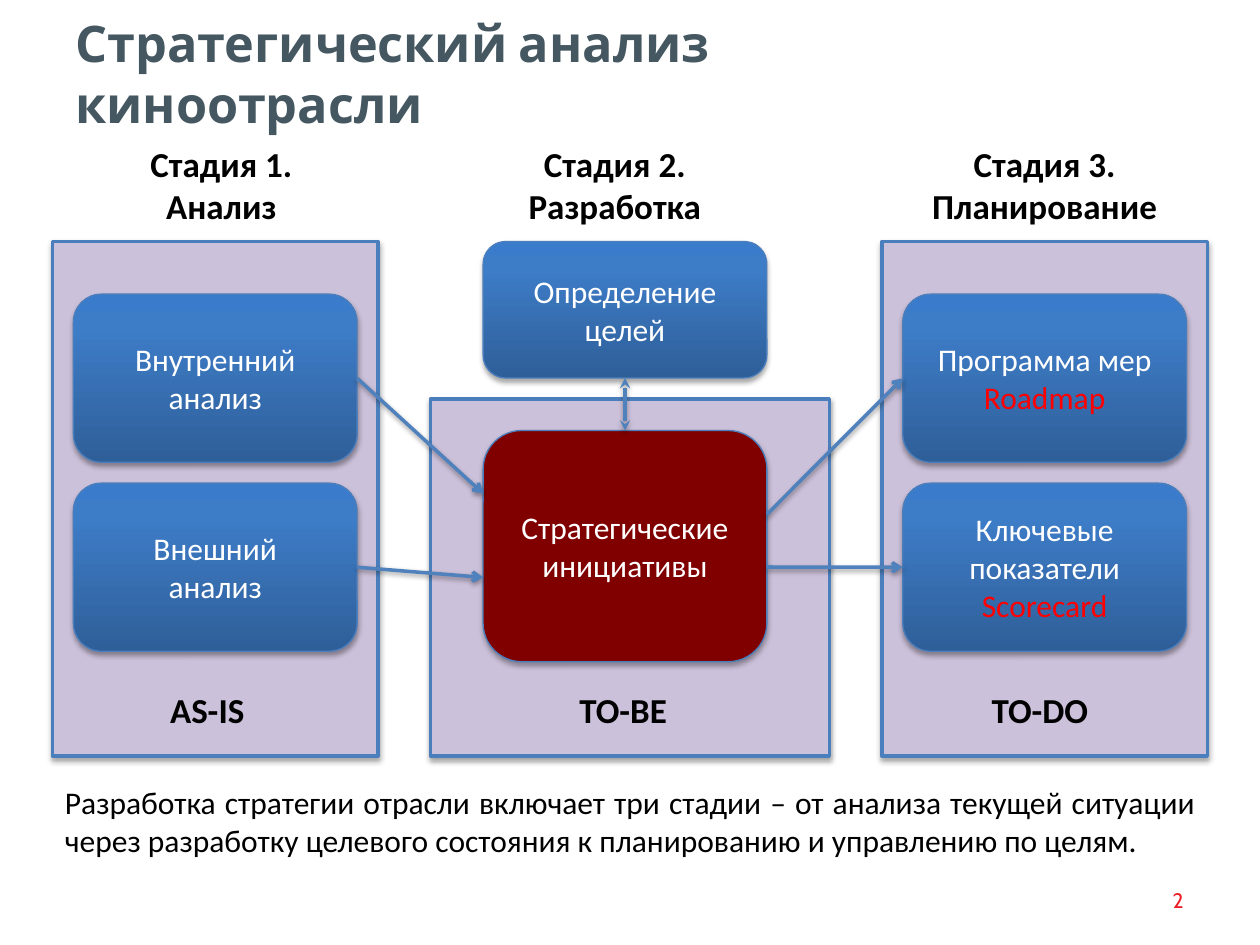
from copy import deepcopy
from dataclasses import dataclass
from typing import Optional

from lxml.etree import SubElement as Sub
from pptx import Presentation
from pptx.dml.color import RGBColor as Rgb
from pptx.enum.shapes import MSO_CONNECTOR as Conn, MSO_SHAPE as Kind
from pptx.enum.text import MSO_ANCHOR as Anchor, PP_ALIGN as Align
from pptx.oxml.ns import qn
from pptx.util import Cm, Pt


@dataclass(frozen=True)
class Theme:
    head: str = "Cabin"
    body: str = "Calibri"
    title: float = 28.8
    label: float = 20
    text: float = 18
    small: float = 12
    slate: str = "455761"
    red: str = "ED1C24"
    mark: str = "FF0000"
    black: str = "000000"
    white: str = "FFFFFF"
    panel: str = "CCC1DA"
    edge: str = "4B7EBC"
    arrow: str = "4F81BD"
    wine: str = "800000"
    blue: tuple = ((0, "2F5F99"), (0.8, "3D7CC7"), (1, "3A7CCB"))


@dataclass(frozen=True)
class Box:
    x: float
    y: float
    w: float
    h: float

    def place(self) -> tuple:
        return Cm(self.x), Cm(self.y), Cm(self.w), Cm(self.h)


@dataclass(frozen=True)
class Card:
    name: str
    box: Box
    text: str
    mark: str = ""
    fill: Optional[str] = None


@dataclass(frozen=True)
class Note:
    text: str
    box: Box
    size: float
    color: str = "000000"
    font: str = "Calibri"
    bold: bool = False
    align: Optional[Align] = None
    anchor: Anchor = Anchor.TOP
    wrap: bool = True


@dataclass(frozen=True)
class Link:
    start: tuple
    end: tuple
    source: Optional[tuple] = None
    target: Optional[tuple] = None
    both: bool = False


T = Theme()
TOP, LEFT, BASE, RIGHT = range(4)


def style(run, size: float, color: str, font: str, bold: bool = False) -> None:
    run.font.size, run.font.name, run.font.bold = Pt(size), font, bold
    run.font.color.rgb = Rgb.from_string(color)


def add_shade(props, alpha: int, dist: float) -> None:
    effect = props.find(qn("a:effectLst"))
    if effect is None:
        effect = Sub(props, qn("a:effectLst"))
    shade = Sub(effect, qn("a:outerShdw"), blurRad=str(Pt(3.1)),
                dist=str(Pt(dist)), dir="5400000", rotWithShape="0")
    color = Sub(shade, qn("a:srgbClr"), val=T.black)
    Sub(color, qn("a:alpha"), val=str(alpha * 1000))


def add_block(slide, kind: Kind, box: Box, fill: Optional[str], width: float):
    shape = slide.shapes.add_shape(kind, *box.place())
    if fill:
        shape.fill.solid()
        shape.fill.fore_color.rgb = Rgb.from_string(fill)
    else:
        shape.fill.gradient()
        shape.fill.gradient_angle = 90
        stops = next(shape._element.spPr.iter(qn("a:gsLst")))
        stops.append(deepcopy(stops[-1]))
        for stop, (place, color) in zip(shape.fill.gradient_stops, T.blue):
            stop.position = place
            stop.color.rgb = Rgb.from_string(color)
    shape.line.color.rgb = Rgb.from_string(T.edge)
    shape.line.width = Pt(width)
    shape.shadow.inherit = False
    add_shade(shape._element.spPr, 35, 1.8)
    return shape


def add_card(slide, card: Card):
    shape = add_block(slide, Kind.ROUNDED_RECTANGLE, card.box, card.fill, 0.75)
    frame = shape.text_frame
    frame.text = card.text
    frame.vertical_anchor = Anchor.MIDDLE
    for para in frame.paragraphs:
        para.alignment = Align.CENTER
        for run in para.runs:
            style(run, T.text, T.white, T.body)
    if card.mark:
        run = frame.paragraphs[-1].add_run()
        run.text = card.mark
        style(run, T.text, T.mark, T.body)
    return shape


def add_note(slide, note: Note) -> None:
    frame = slide.shapes.add_textbox(*note.box.place()).text_frame
    frame.text = note.text
    frame.word_wrap = note.wrap
    frame.vertical_anchor = note.anchor
    for para in frame.paragraphs:
        para.alignment = note.align
        for run in para.runs:
            style(run, note.size, note.color, note.font, note.bold)


def add_link(slide, link: Link, cards: dict) -> None:
    ends = [Cm(n) for n in link.start + link.end]
    line = slide.shapes.add_connector(Conn.STRAIGHT, *ends)
    if link.source:
        line.begin_connect(cards[link.source[0]], link.source[1])
    if link.target:
        line.end_connect(cards[link.target[0]], link.target[1])
    line.line.color.rgb = Rgb.from_string(T.arrow)
    line.line.width = Pt(2)
    stroke = line.line._get_or_add_ln()
    if link.both:
        Sub(stroke, qn("a:headEnd"), type="stealth")
    Sub(stroke, qn("a:tailEnd"), type="stealth" if link.both else "arrow")
    add_shade(line._element.spPr, 38, 1.6)


SIDE, MID, LAST = 1.48, 9.74, 18.2
WIDE, HIGH = 5.72, 3.39
ROW_A, ROW_B = 5.93, 9.74

PANELS = [Box(1.06, 4.87, 6.56, 10.37), Box(8.68, 8.04, 8.04, 7.2),
          Box(17.78, 4.87, 6.56, 10.37)]

CARDS = [
    Card("inner", Box(SIDE, ROW_A, WIDE, HIGH), "Внутренний анализ"),
    Card("outer", Box(SIDE, ROW_B, WIDE, HIGH), "Внешний\nанализ"),
    Card("goals", Box(MID, 4.87, WIDE, 2.75), "Определение целей"),
    Card("core", Box(MID, 8.68, WIDE, 4.66), "Стратегические инициативы",
         fill=T.wine),
    Card("road", Box(LAST, ROW_A, WIDE, HIGH), "Программа мер ", "Roadmap"),
    Card("score", Box(LAST, ROW_B, WIDE, HIGH), "Ключевые показатели ",
         "Scorecard"),
]

LINKS = [
    Link((7.2, 7.62), (MID, 9.95), source=("inner", RIGHT)),
    Link((7.2, 11.43), (MID, 11.64), source=("outer", RIGHT)),
    Link((12.6, 7.62), (12.6, 8.68), ("goals", BASE), ("core", TOP), True),
    Link((MID + WIDE, 11.43), (LAST, 11.43), target=("score", LEFT)),
    Link((MID + WIDE, 10.37), (LAST, 7.62), target=("road", LEFT)),
]

STAGES = [("Стадия 1.\nАнализ", 2.75, 3.43),
          ("Стадия 2.\nРазработка", 10.39, 4.01),
          ("Стадия 3.\nПланирование", 18.52, 5.08)]
STATES = [("AS-IS", 3.18, 2.06), ("TO-BE", 11.43, 2.29), ("TO-DO", 19.74, 2.49)]

NOTES = [
    Note("Стратегический анализ киноотрасли", Box(1.27, 0.76, 19.38, 1.42),
         T.title, T.slate, T.head, True, anchor=Anchor.MIDDLE),
    Note("2", Box(22.81, 17.63, 1.3, 1.02), T.small, T.red, T.head,
         align=Align.RIGHT, anchor=Anchor.MIDDLE),
    Note("Разработка стратегии отрасли включает три стадии – от анализа "
         "текущей ситуации через разработку целевого состояния к "
         "планированию и управлению по целям.",
         Box(1.06, 15.67, 23.29, 1.8), T.text, align=Align.JUSTIFY),
    *[Note(text, Box(x, 2.75, w, 1.96), T.label, bold=True,
           align=Align.CENTER, wrap=False) for text, x, w in STAGES],
    *[Note(text, Box(x, 13.76, w, 1.12), T.label, bold=True, wrap=False)
      for text, x, w in STATES],
]


def main() -> None:
    deck = Presentation()
    deck.slide_width, deck.slide_height = Cm(25.4), Cm(19.05)
    slide = deck.slides.add_slide(deck.slide_layouts[6])
    for box in PANELS:
        add_block(slide, Kind.RECTANGLE, box, T.panel, 2)
    cards = {card.name: add_card(slide, card) for card in CARDS}
    for link in LINKS:
        add_link(slide, link, cards)
    for note in NOTES:
        add_note(slide, note)
    deck.save("out.pptx")


if __name__ == "__main__":
    main()
